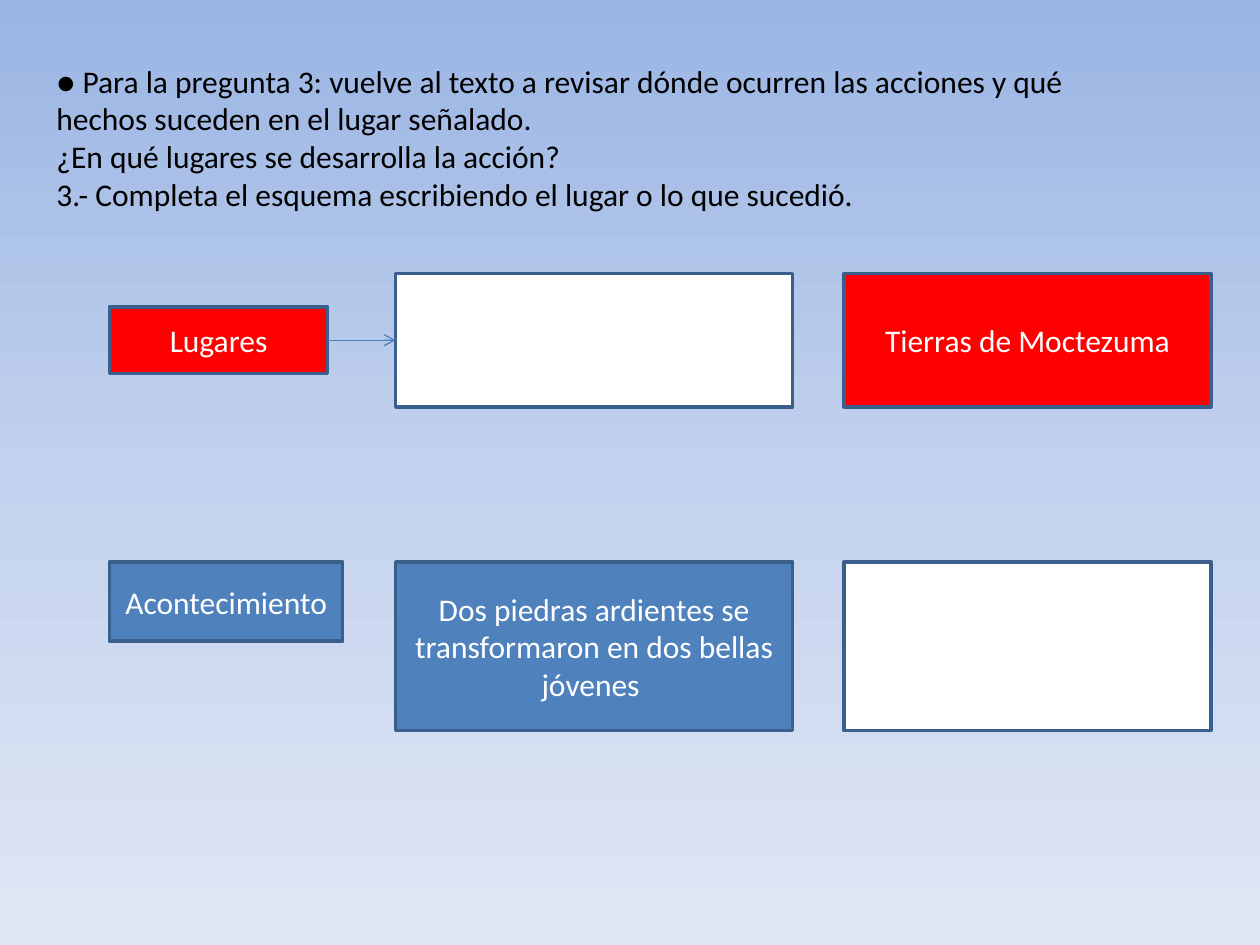
import copy

import pptx
import pptx.dml.color
import pptx.enum.shapes
import pptx.enum.text
import pptx.oxml
import pptx.oxml.ns
import pptx.util

RGBColor = pptx.dml.color.RGBColor
BLACK = RGBColor(0x00, 0x00, 0x00)
WHITE = RGBColor(0xFF, 0xFF, 0xFF)
RED = RGBColor(0xFF, 0x00, 0x00)
BLUE = RGBColor(0x4F, 0x81, 0xBD)
BORDER_BLUE = RGBColor(0x3A, 0x5F, 0x8C)
ARROW_BLUE = RGBColor(0x4B, 0x7E, 0xBC)
SKY_STOPS = [
    (0, RGBColor(0x9A, 0xB5, 0xE4)),
    (0.5, RGBColor(0xC2, 0xD1, 0xED)),
    (1, RGBColor(0xE1, 0xE8, 0xF5)),
]

LABEL_LEFT = 0.87
PLACE_COLUMNS = [(3.14, 3.15), (6.7, 2.91)]
PLACES_ROW = (2.17, 1.06)
EVENTS_ROW = (4.46, 1.34)

INSTRUCTIONS = [
    "● Para la pregunta 3: vuelve al texto a revisar dónde ocurren las acciones y qué",
    "hechos suceden en el lugar señalado.",
    "¿En qué lugares se desarrolla la acción?",
    "3.- Completa el esquema escribiendo el lugar o lo que sucedió.",
]
PLACES = [("", WHITE), ("Tierras de Moctezuma", RED)]
EVENTS = [
    ("Dos piedras ardientes se transformaron en dos bellas jóvenes ", BLUE),
    ("", WHITE),
]


def inches(*lengths):
    return [pptx.util.Inches(length) for length in lengths]


def paint_background(slide):
    fill = slide.background.fill
    fill.gradient()
    fill.gradient_angle = 270
    stop_list = slide.element.find(".//" + pptx.oxml.ns.qn("a:gsLst"))
    stop_list.append(copy.deepcopy(stop_list[-1]))
    for stop, (position, color) in zip(fill.gradient_stops, SKY_STOPS):
        stop.position = position
        stop.color.rgb = color


def style_paragraph(paragraph, color):
    paragraph.font.name = "Calibri"
    paragraph.font.size = pptx.util.Pt(18)
    paragraph.font.color.rgb = color


def add_instructions(slide, left, top, width, height):
    text_box = slide.shapes.add_textbox(*inches(left, top, width, height))
    text_frame = text_box.text_frame
    text_frame.word_wrap = True
    text_frame.text = "\n".join(INSTRUCTIONS)
    for paragraph in text_frame.paragraphs:
        style_paragraph(paragraph, BLACK)


def add_box(slide, left, top, width, height, text, fill_color):
    shape = slide.shapes.add_shape(
        pptx.enum.shapes.MSO_SHAPE.RECTANGLE, *inches(left, top, width, height)
    )
    shape.shadow.inherit = False
    shape.fill.solid()
    shape.fill.fore_color.rgb = fill_color
    shape.line.color.rgb = BORDER_BLUE
    shape.line.width = pptx.util.Pt(2)
    if text:
        text_frame = shape.text_frame
        text_frame.word_wrap = True
        text_frame.vertical_anchor = pptx.enum.text.MSO_ANCHOR.MIDDLE
        paragraph = text_frame.paragraphs[0]
        paragraph.text = text
        paragraph.alignment = pptx.enum.text.PP_ALIGN.CENTER
        style_paragraph(paragraph, WHITE)


def add_box_row(slide, row, contents):
    top, height = row
    for (left, width), (text, fill_color) in zip(PLACE_COLUMNS, contents):
        add_box(slide, left, top, width, height, text, fill_color)


def add_arrow(slide, start_x, end_x, y):
    connector = slide.shapes.add_connector(
        pptx.enum.shapes.MSO_CONNECTOR.STRAIGHT, *inches(start_x, y, end_x, y)
    )
    connector.line.color.rgb = ARROW_BLUE
    connector.line.width = pptx.util.Pt(0.75)
    namespace = pptx.oxml.ns.nsdecls("a")
    line = connector.line._get_or_add_ln()
    line.append(pptx.oxml.parse_xml(f'<a:tailEnd {namespace} type="arrow"/>'))
    properties = connector.element.spPr
    properties.append(pptx.oxml.parse_xml(f"<a:effectLst {namespace}/>"))


def main():
    presentation = pptx.Presentation()
    presentation.slide_width, presentation.slide_height = inches(10, 7.5)
    slide = presentation.slides.add_slide(presentation.slide_layouts[6])
    paint_background(slide)
    add_instructions(slide, 0.35, 0.44, 9.13, 1.62)

    label_width, label_height = 1.73, 0.53
    row_middle = PLACES_ROW[0] + PLACES_ROW[1] / 2
    label_top = row_middle - label_height / 2
    add_box(slide, LABEL_LEFT, label_top, label_width, label_height, "Lugares", RED)
    add_box_row(slide, PLACES_ROW, PLACES)

    add_box(slide, LABEL_LEFT, EVENTS_ROW[0], 1.85, 0.63, "Acontecimiento", BLUE)
    add_box_row(slide, EVENTS_ROW, EVENTS)

    add_arrow(slide, LABEL_LEFT + label_width, PLACE_COLUMNS[0][0], row_middle)
    presentation.save("out.pptx")


if __name__ == "__main__":
    main()
